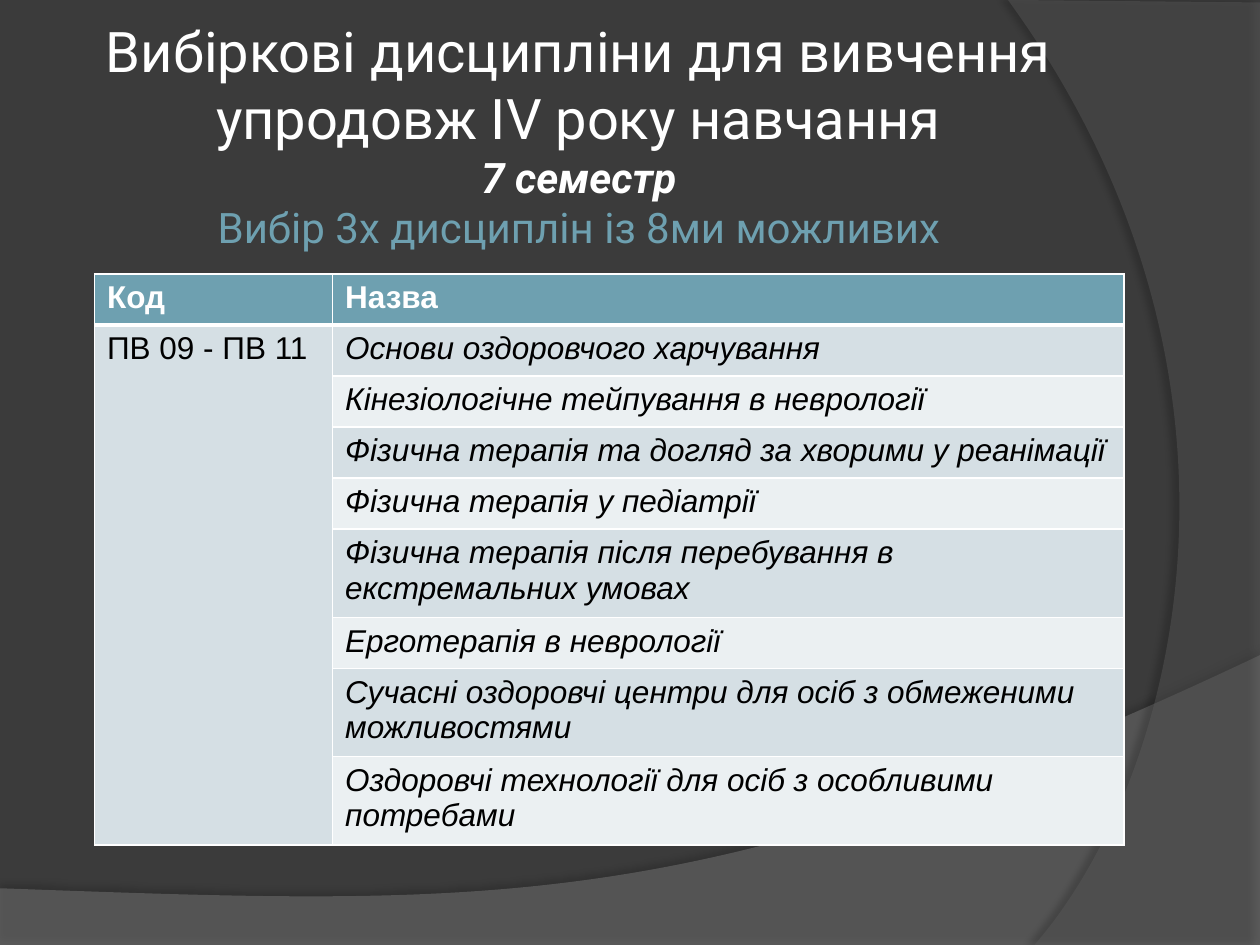
from lxml import etree
from pptx import Presentation
from pptx.dml.color import RGBColor
from pptx.enum.text import MSO_ANCHOR, PP_ALIGN
from pptx.oxml.ns import qn
from pptx.util import Inches, Pt

CENTER = PP_ALIGN.CENTER
MIDDLE = MSO_ANCHOR.MIDDLE

THEME = {
    "background": "3B3B3B", "wave": "7F7F7F", "arc": "5E5E5E",
    "white": "FFFFFF", "black": "000000", "accent": "6EA0B0",
    "odd": "D5DFE4", "even": "EBF0F2",
    "title_font": "Roboto", "table_font": "Arial",
    "title_size": 32, "subtitle_size": 24, "table_size": 18,
}

# Grid of 100 columns by 75 rows with square cells
COLUMNS, ROWS = 100, 75
CELL = Inches(0.1)


def grid(*counts):
    return [round(count * CELL) for count in counts]


def style_span(span, font, size, color, bold=False, italic=False):
    span.font.name = font
    span.font.size = Pt(size)
    span.font.color.rgb = RGBColor.from_string(color)
    span.font.bold, span.font.italic = bold, italic


deck = Presentation()
deck.slide_width, deck.slide_height = grid(COLUMNS, ROWS)
page = deck.slides.add_slide(deck.slide_layouts[6])
page.background.fill.solid()
page.background.fill.fore_color.rgb = RGBColor.from_string(THEME["background"])

# Background sweeps: straight corners, curve handles, fill, shadow
sweeps = [
    ([(0, 70.5), (0, 75), (100, 75), (100, 52)],
     [(55.9, 72.9), (39.1, 71.9)],
     THEME["wave"], 45, (35, 4, 3.5, 270)),
    ([(80, 0), (100, 0.2), (100, 75), (82.1, 75)],
     [(93.5, 61.9), (101.8, 30)],
     THEME["arc"], 40, (45, 4, 4, 180)),
]
for corners, handles, color, alpha, shadow in sweeps:
    points = [grid(*corner) for corner in corners]
    builder = page.shapes.build_freeform(*points[0], scale=1.0)
    builder.add_line_segments(points[1:], close=True)
    sweep = builder.convert_to_shape()
    sweep.line.fill.background()
    sweep.fill.solid()
    sweep.fill.fore_color.rgb = RGBColor.from_string(color)
    properties = sweep.element.spPr

    # Curved edge back to the first corner
    close = next(properties.iter(qn("a:close")))
    curve = etree.Element(qn("a:cubicBezTo"))
    for handle in handles + corners[:1]:
        x, y = grid(*handle)
        etree.SubElement(curve, qn("a:pt"), x=str(x - sweep.left), y=str(y - sweep.top))
    close.addprevious(curve)

    # Transparency and shadow
    fill_color = properties.find(qn("a:solidFill"))[0]
    etree.SubElement(fill_color, qn("a:alpha"), val=str(alpha * 1000))
    sweep.shadow.inherit = False
    opacity, blur, distance, angle = shadow
    outer = etree.SubElement(
        properties.find(qn("a:effectLst")), qn("a:outerShdw"),
        blurRad=str(Pt(blur)), dist=str(Pt(distance)), dir=str(angle * 60000))
    shadow_color = etree.SubElement(outer, qn("a:srgbClr"), val=THEME["black"])
    etree.SubElement(shadow_color, qn("a:alpha"), val=str(opacity * 1000))

# Title with semester and choice lines
title = page.shapes.add_textbox(*grid(5.1, 4.4, 81.7, 12.5))
frame = title.text_frame
frame.word_wrap = True
frame.vertical_anchor = MIDDLE
frame.margin_left = frame.margin_right = CELL // 2
frame.margin_top = frame.margin_bottom = CELL // 2
para = frame.paragraphs[0]
para.text = ("Вибіркові дисципліни для вивчення упродовж ІV року навчання\v"
             "7 семестр\vВибір 3х дисциплін із 8ми можливих")
para.alignment = CENTER
title_styles = [
    (THEME["title_size"], THEME["white"], False),
    (THEME["subtitle_size"], THEME["white"], True),
    (THEME["subtitle_size"], THEME["accent"], False),
]
for span, (size, color, strong) in zip(para.runs, title_styles):
    style_span(span, THEME["title_font"], size, color, strong, strong)

# Table of elective courses
courses = [
    "Основи оздоровчого харчування",
    "Кінезіологічне тейпування в неврології",
    "Фізична терапія та догляд за хворими у реанімації",
    "Фізична терапія у педіатрії",
    "Фізична терапія після перебування в екстремальних умовах",
    "Ерготерапія в неврології",
    "Сучасні оздоровчі центри для осіб з обмеженими можливостями",
    "Оздоровчі технології для осіб з особливими потребами",
]
records = [("Код", "Назва"), ("ПВ 09 - ПВ 11", courses[0])]
records += [("", course) for course in courses[1:]]
LINE_LIMIT = 50  # longer names take two lines
heights = [6.6 if len(name) > LINE_LIMIT else 4.05 for code, name in records]
table = page.shapes.add_table(
    len(records), 2, *grid(7.5, 21.75, 81.7, sum(heights))).table
for column, width in zip(table.columns, grid(18.9, 62.8)):
    column.width = width

for r, record in enumerate(records):
    table.rows[r].height = round(heights[r] * CELL)
    header = r == 0
    for c, words in enumerate(record):
        cell = table.cell(r, c)
        # Thin borders, with a heavy rule below the header
        properties = cell._tc.get_or_add_tcPr()
        for side in "LRTB":
            heavy = (r, side) in ((0, "B"), (1, "T"))
            border = etree.SubElement(properties, qn("a:ln" + side),
                                      w=str(Pt(3 if heavy else 1)))
            line_fill = etree.SubElement(border, qn("a:solidFill"))
            etree.SubElement(line_fill, qn("a:srgbClr"), val=THEME["white"])
        shade = "accent" if header else "odd" if r % 2 or c == 0 else "even"
        cell.fill.solid()
        cell.fill.fore_color.rgb = RGBColor.from_string(THEME[shade])
        if words:
            cell.text_frame.text = words
            style_span(cell.text_frame.paragraphs[0].runs[0],
                       THEME["table_font"], THEME["table_size"],
                       THEME["white" if header else "black"],
                       bold=header, italic=not header and c == 1)

table.cell(1, 0).merge(table.cell(len(records) - 1, 0))

deck.save("out.pptx")
